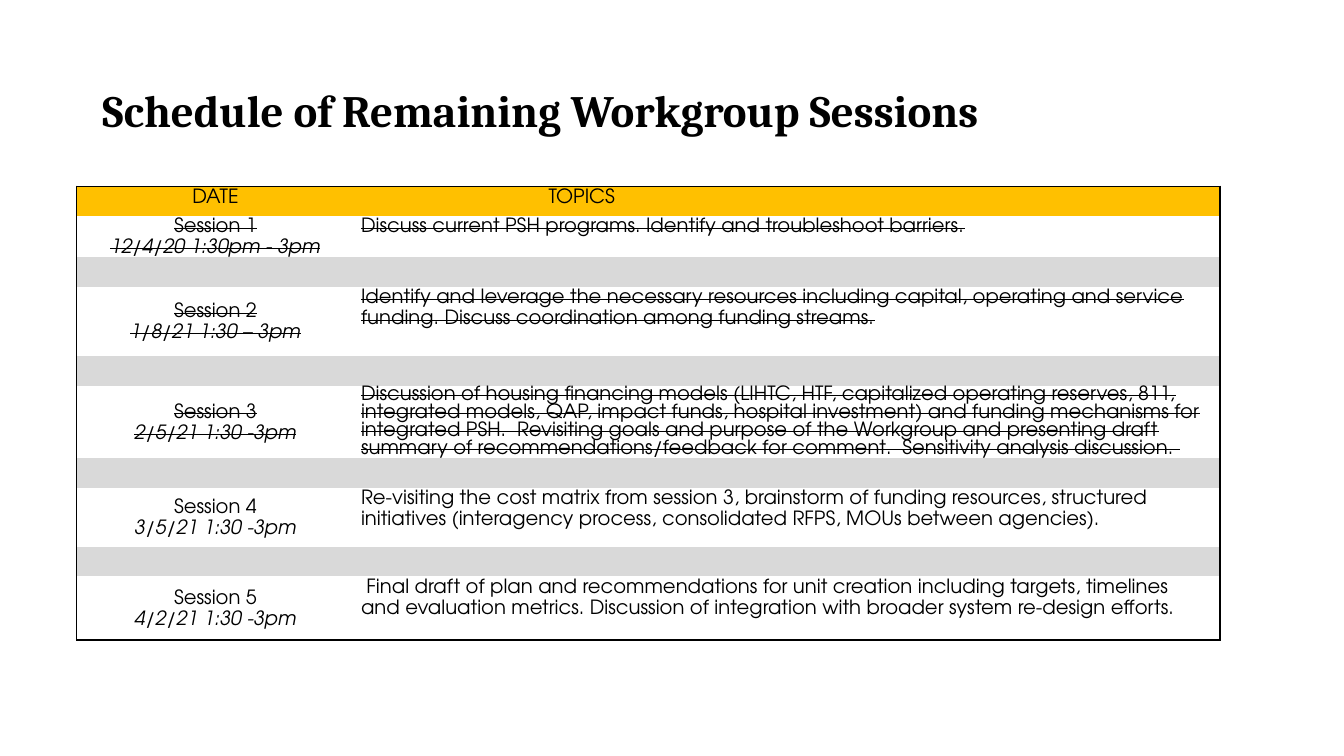
from dataclasses import dataclass

from lxml import etree
from pptx import Presentation
from pptx.dml.color import RGBColor
from pptx.enum import text as t
from pptx.oxml import ns
from pptx.util import Pt


@dataclass(frozen=True)
class Theme:
    ink: str = "000000"
    gold: str = "FFC000"
    grey: str = "D9D9D9"
    white: str = "FFFFFF"
    head: str = "Cambria"
    body: str = "TeX Gyre Adventor"
    big: int = 32
    small: int = 14
    rule: int = 1


THEME = Theme()
WIDTHS = (198, 618.5)
BAND = 21

# Session name, time, topics, row height, done, line spacing of topics
PLAN = [
    ("Session 1", "12/4/20 1:30pm - 3pm",
     "Discuss current PSH programs. Identify and troubleshoot barriers.",
     21, True, 1.15),
    ("Session 2", "1/8/21 1:30 – 3pm",
     "Identify and leverage the necessary resources including capital, "
     "operating and service funding. Discuss coordination among funding "
     "streams.",
     49.7, True, 1.15),
    ("Session 3", "2/5/21 1:30 -3pm",
     "Discussion of housing financing models (LIHTC, HTF, capitalized "
     "operating reserves, 811, integrated models, QAP, impact funds, "
     "hospital investment) and funding mechanisms for integrated PSH.  "
     "Revisiting goals and purpose of the Workgroup and presenting draft "
     "summary of recommendations/feedback for comment.  Sensitivity "
     "analysis discussion. ",
     36.7, True, 1),
    ("Session 4", "3/5/21 1:30 -3pm",
     "Re-visiting the cost matrix from session 3, brainstorm of funding "
     "resources, structured initiatives (interagency process, consolidated "
     "RFPS, MOUs between agencies). ",
     42.5, False, 1.15),
    ("Session 5", "4/2/21 1:30 -3pm",
     " Final draft of plan and recommendations for unit creation including "
     "targets, timelines and evaluation metrics. Discussion of integration "
     "with broader system re-design efforts.",
     45.4, False, 1.15),
]


def write(para, words, font=THEME.body, size=THEME.small, bold=False,
          slant=False, strike=False, align=t.PP_ALIGN.LEFT, space=1.15):
    """Put one formatted run into a paragraph."""
    para.alignment = align
    para.line_spacing = space
    run = para.add_run()
    run.text = words
    run.font.name = font
    run.font.size = Pt(size)
    run.font.bold = bold
    run.font.italic = slant
    run.font.color.rgb = RGBColor.from_string(THEME.ink)
    if strike:
        run.font._element.set("strike", "sngStrike")


def add_tabs(para, stops):
    tabs = etree.SubElement(para._p.get_or_add_pPr(), ns.qn("a:tabLst"))
    for pos, kind in stops:
        etree.SubElement(tabs, ns.qn("a:tab"), pos=str(Pt(pos)), algn=kind)


def edge(cell, sides):
    """Rule the named sides of a cell and clear the others."""
    props = cell._tc.get_or_add_tcPr()
    for side in "LRTB":
        line = etree.SubElement(props, ns.qn("a:ln" + side))
        if side in sides:
            line.set("w", str(Pt(THEME.rule)))
            fill = etree.SubElement(line, ns.qn("a:solidFill"))
            etree.SubElement(fill, ns.qn("a:srgbClr"), val=THEME.ink)
        else:
            line.set("w", "0")
            etree.SubElement(line, ns.qn("a:noFill"))


def style_cell(cell, color, sides):
    edge(cell, sides)
    cell.fill.solid()
    cell.fill.fore_color.rgb = RGBColor.from_string(color)
    cell.margin_left = cell.margin_right = Pt(5)
    cell.margin_top = cell.margin_bottom = 0


def add_title(slide, words):
    title = slide.shapes.title
    title.left, title.top = Pt(66), Pt(28.75)
    title.width, title.height = Pt(828), Pt(104.4)
    frame = title.text_frame
    frame.word_wrap = True
    frame.vertical_anchor = t.MSO_ANCHOR.MIDDLE
    write(frame.paragraphs[0], words, font=THEME.head, size=THEME.big,
          bold=True, space=0.9)


def add_grid(slide, heights):
    """Make the framed table with its gold, white and grey rows."""
    grid = slide.shapes.add_table(len(heights), len(WIDTHS), Pt(54.9), Pt(133),
                                  Pt(sum(WIDTHS)), Pt(sum(heights))).table
    grid.first_row = grid.horz_banding = False
    for col, width in zip(grid.columns, WIDTHS):
        col.width = Pt(width)
    last = len(heights) - 1
    for i, height in enumerate(heights):
        grid.rows[i].height = Pt(height)
        color = THEME.gold if i == 0 else THEME.white if i % 2 else THEME.grey
        ends = "T" * (i == 0) + "B" * (i == last)
        for j, side in enumerate("LR"):
            style_cell(grid.cell(i, j), color, side + ends)
    return grid


def fill_head(grid):
    date, topic = (grid.cell(0, j).text_frame.paragraphs[0] for j in (0, 1))
    write(date, "DATE", align=t.PP_ALIGN.CENTER)
    write(topic, "\t\tTOPICS")
    add_tabs(topic, [(47.5, "l"), (157.7, "ctr")])


def fill_row(grid, row, name, time, topic, done, space):
    cell = grid.cell(row, 0)
    cell.vertical_anchor = t.MSO_ANCHOR.MIDDLE
    frame = cell.text_frame
    mid = t.PP_ALIGN.CENTER
    write(frame.paragraphs[0], name, strike=done, align=mid)
    write(frame.add_paragraph(), time, slant=True, strike=done, align=mid)
    write(grid.cell(row, 1).text_frame.paragraphs[0], topic, strike=done,
          space=space)


def fill_band(grid, row):
    """Keep an empty row low by giving its cells the small type size."""
    for cell in grid.rows[row].cells:
        para = cell.text_frame.paragraphs[0]
        end = etree.SubElement(para._p, ns.qn("a:endParaRPr"),
                               sz=str(THEME.small * 100))
        etree.SubElement(end, ns.qn("a:latin"), typeface=THEME.body)


def main():
    deck = Presentation()
    deck.slide_width, deck.slide_height = Pt(960), Pt(540)
    slide = deck.slides.add_slide(deck.slide_layouts[5])

    # Title
    add_title(slide, "Schedule of Remaining Workgroup Sessions")

    # Table: a band stands before each session but the first
    heights = [h for plan in PLAN for h in (BAND, plan[3])]
    grid = add_grid(slide, heights)
    fill_head(grid)
    for i, (name, time, topic, _, done, space) in enumerate(PLAN):
        if i:
            fill_band(grid, 2 * i)
        fill_row(grid, 2 * i + 1, name, time, topic, done, space)

    deck.save("out.pptx")


if __name__ == "__main__":
    main()
